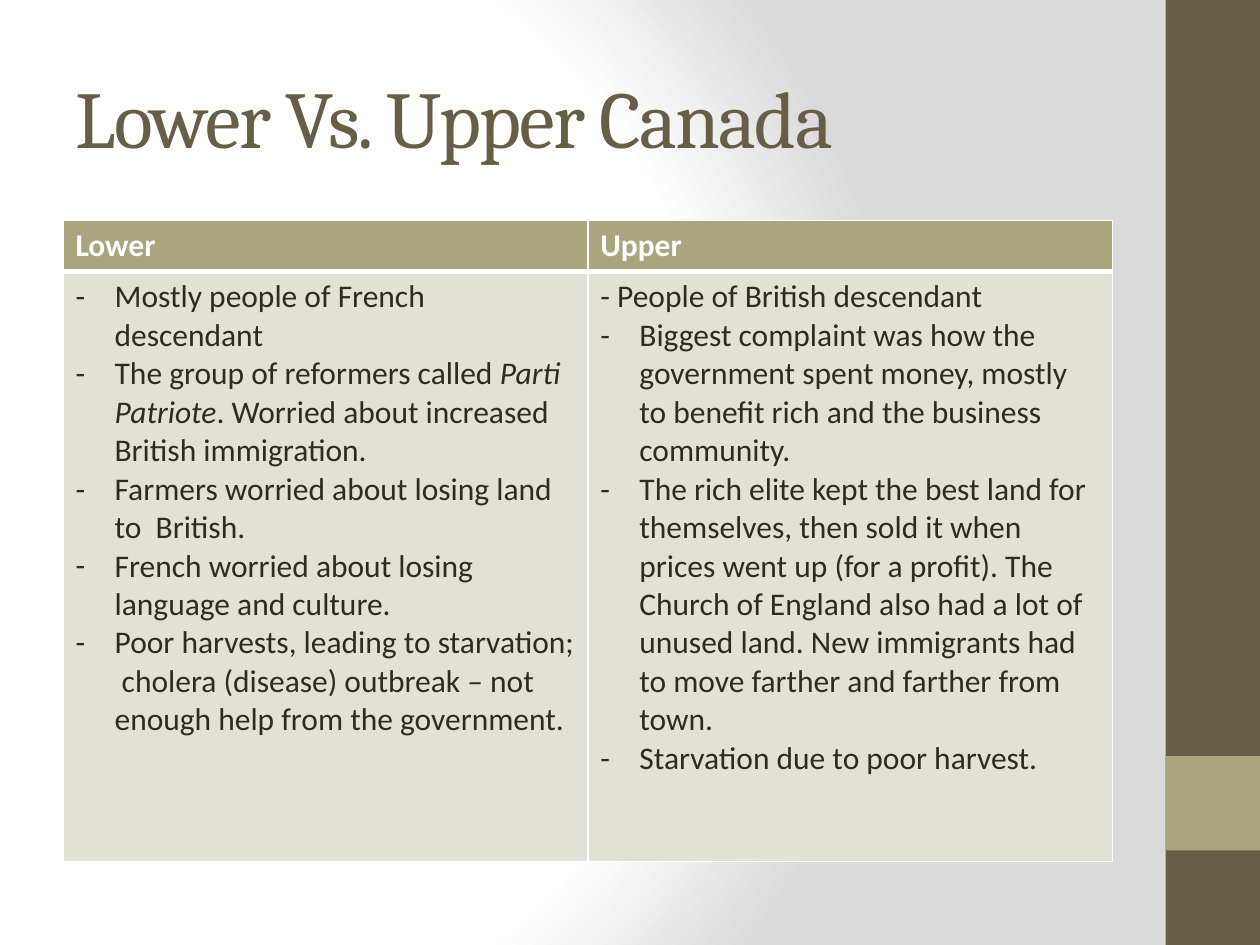
from pptx import Presentation
from pptx.dml.color import RGBColor
from pptx.enum.shapes import MSO_SHAPE
from pptx.enum.text import MSO_ANCHOR, PP_ALIGN
from pptx.oxml import parse_xml
from pptx.oxml.ns import nsdecls
from pptx.util import Inches, Pt

BROWN, OLIVE, PALE, INK, WHITE = "675E47", "A9A57C", "E2E1D7", "2F2B20", "FFFFFF"
TITLE = "Lower Vs. Upper Canada"
# Each paragraph: (is bulleted, runs); each run: (text, is italic)
COLUMNS = [
    ("Lower", [
        (True, [("Mostly people of French descendant", False)]),
        (True, [("The group of reformers called ", False), ("Parti Patriote", True),
                (". Worried about increased British immigration.", False)]),
        (True, [("Farmers worried about losing land to  British.", False)]),
        (True, [("French worried about losing language and culture.", False)]),
        (True, [("Poor harvests, leading to starvation;  cholera (disease) outbreak – "
                 "not enough help from the government.", False)]),
    ]),
    ("Upper", [
        (False, [("- People of British descendant", False)]),
        (True, [("Biggest complaint was how the government spent money, mostly to "
                 "benefit rich and the business community.", False)]),
        (True, [("The rich elite kept the best land for themselves, then sold it when "
                 "prices went up (for a profit). The Church of England also had a lot of "
                 "unused land. New immigrants had to move farther and farther from town.",
                 False)]),
        (True, [("Starvation due to poor harvest.", False)]),
    ]),
]
SIDEBAR = [(0, 7.5, BROWN), (6, 0.75, OLIVE)]  # top, height, colour
GRADIENT = [(0, WHITE), (75, WHITE), (100, "DADADA")]
LEFT, WIDTH = 0.5, 8.33
ROW_HEIGHTS = [0.4, 4.68]


def color(value):
    return RGBColor.from_string(value)


def set_font(paragraph, name, size, value, bold=False):
    font = paragraph.font
    font.name, font.size, font.bold = name, Pt(size), bold
    font.color.rgb = color(value)


def set_background(slide):
    """Fill the background with a circular gradient."""
    slide.background.fill.gradient()
    linear = slide.element.xpath(".//p:bgPr/a:gradFill")[0]
    stops = "".join(f'<a:gs pos="{position * 1000}"><a:srgbClr val="{value}"/></a:gs>'
                    for position, value in GRADIENT)
    linear.getparent().replace(linear, parse_xml(
        f'<a:gradFill {nsdecls("a")} rotWithShape="1"><a:gsLst>{stops}</a:gsLst>'
        '<a:path path="circle"><a:fillToRect l="20000" t="50000" r="100000" b="50000"/>'
        '</a:path></a:gradFill>'))


def add_sidebar(slide):
    for top, height, value in SIDEBAR:
        bar = slide.shapes.add_shape(MSO_SHAPE.RECTANGLE, Inches(9.25), Inches(top),
                                     Inches(0.75), Inches(height))
        bar.shadow.inherit = False
        bar.fill.solid()
        bar.fill.fore_color.rgb = color(value)
        bar.line.fill.background()


def add_title(slide):
    title = slide.shapes.title
    title.left, title.top = Inches(LEFT), Inches(0.3)
    title.width, title.height = Inches(WIDTH), Inches(1.25)
    title.text_frame.text = TITLE
    title.text_frame.vertical_anchor = MSO_ANCHOR.MIDDLE
    paragraph = title.text_frame.paragraphs[0]
    paragraph.alignment = PP_ALIGN.LEFT
    set_font(paragraph, "Cambria", 46, BROWN)
    paragraph.runs[0].font._element.set("spc", "-100")


def style_cell(cell, fill, top, bottom):
    """Set the fill and white borders; top and bottom are line widths in points."""
    cell.fill.solid()
    cell.fill.fore_color.rgb = color(fill)
    properties = cell._tc.get_or_add_tcPr()
    borders = [("lnL", 1), ("lnR", 1), ("lnT", top), ("lnB", bottom)]
    for index, (tag, width) in enumerate(borders):
        properties.insert(index, parse_xml(
            f'<a:{tag} {nsdecls("a")} w="{Pt(width)}"><a:solidFill>'
            f'<a:srgbClr val="{WHITE}"/></a:solidFill></a:{tag}>'))


def add_dash(paragraph):
    properties = paragraph._p.get_or_add_pPr()
    indent = Inches(0.31)
    properties.set("marL", str(indent))
    properties.set("indent", str(-indent))
    properties.append(parse_xml(f'<a:buFont {nsdecls("a")} typeface="Calibri"/>'))
    properties.append(parse_xml(f'<a:buChar {nsdecls("a")} char="-"/>'))


def fill_body(cell, items):
    for index, (bulleted, runs) in enumerate(items):
        frame = cell.text_frame
        paragraph = frame.paragraphs[0] if index == 0 else frame.add_paragraph()
        if bulleted:
            add_dash(paragraph)
        for text, italic in runs:
            run = paragraph.add_run()
            run.text = text
            run.font.italic = italic
        set_font(paragraph, "Calibri", 18, INK)


def add_comparison(slide):
    table = slide.shapes.add_table(2, len(COLUMNS), Inches(LEFT), Inches(1.75),
                                   Inches(WIDTH), Inches(sum(ROW_HEIGHTS))).table
    table.horz_banding = False
    for row, height in zip(table.rows, ROW_HEIGHTS):
        row.height = Inches(height)
    for column, (heading, items) in enumerate(COLUMNS):
        header, body = table.cell(0, column), table.cell(1, column)
        header.text = heading
        set_font(header.text_frame.paragraphs[0], "Calibri", 18, WHITE, bold=True)
        style_cell(header, OLIVE, top=1, bottom=3)
        fill_body(body, items)
        style_cell(body, PALE, top=3, bottom=1)


def main():
    presentation = Presentation()
    presentation.slide_width, presentation.slide_height = Inches(10), Inches(7.5)
    slide = presentation.slides.add_slide(presentation.slide_layouts[5])
    set_background(slide)
    add_sidebar(slide)
    add_title(slide)
    add_comparison(slide)
    presentation.save("out.pptx")


if __name__ == "__main__":
    main()
